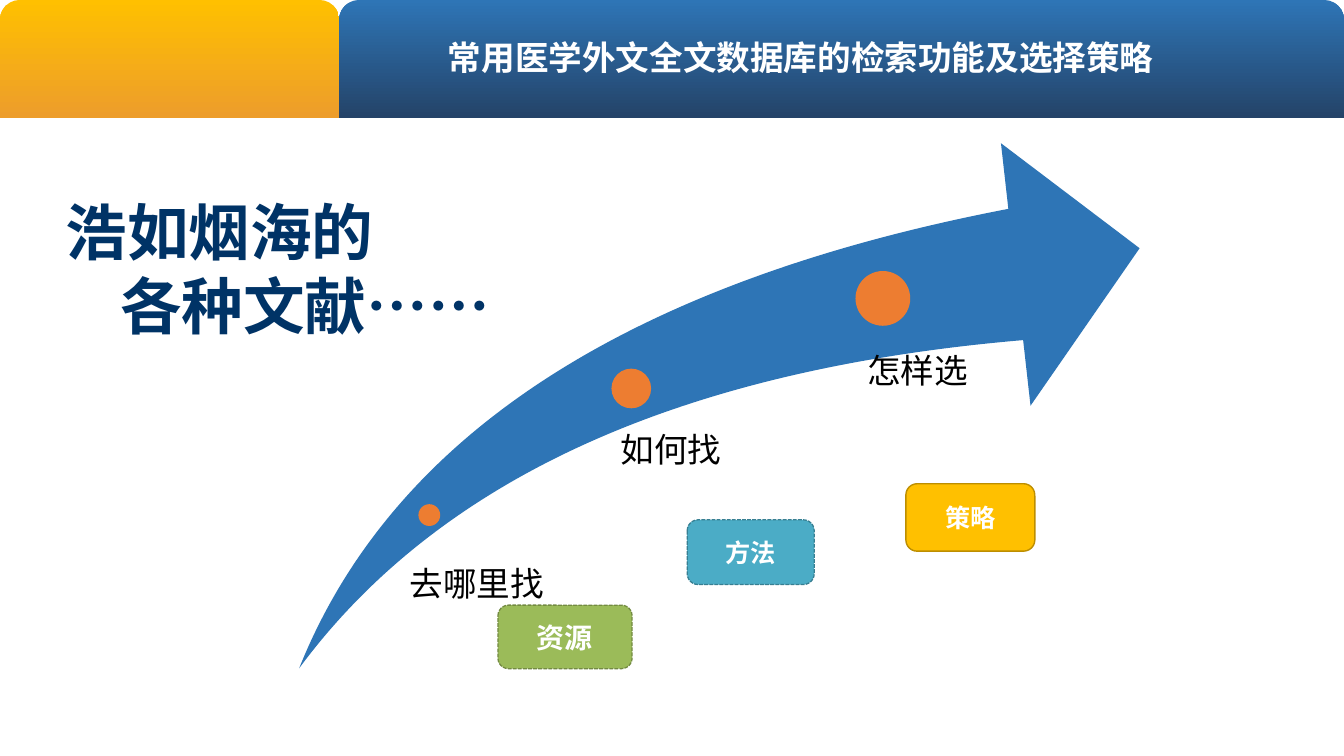
import pptx
import pptx.util
import pptx.dml.color
import pptx.enum.dml
import pptx.enum.shapes
import pptx.enum.text
import pptx.oxml
import pptx.oxml.ns

Cm, Pt = pptx.util.Cm, pptx.util.Pt
RGBColor = pptx.dml.color.RGBColor
SHAPE = pptx.enum.shapes.MSO_SHAPE
ALIGN = pptx.enum.text.PP_ALIGN
ANCHOR = pptx.enum.text.MSO_ANCHOR
DASH = pptx.enum.dml.MSO_LINE

BLUE = RGBColor(0x2E, 0x75, 0xB6)
DEEP_BLUE = RGBColor(0x24, 0x43, 0x68)
NAVY = RGBColor(0x00, 0x33, 0x66)
GOLD = RGBColor(0xFF, 0xC0, 0x00)
AMBER = RGBColor(0xED, 0x9D, 0x2B)
ORANGE = RGBColor(0xED, 0x7D, 0x31)
GREEN = RGBColor(0x9B, 0xBB, 0x59)
DARK_GREEN = RGBColor(0x73, 0x8A, 0x42)
TEAL = RGBColor(0x4B, 0xAC, 0xC6)
DARK_TEAL = RGBColor(0x37, 0x7F, 0x92)
DARK_GOLD = RGBColor(0xBD, 0x8E, 0x00)
BLACK = RGBColor(0, 0, 0)
WHITE = RGBColor(0xFF, 0xFF, 0xFF)
CJK = "Noto Sans CJK SC"


def style(p, size, color, bold=False, align=ALIGN.LEFT, latin=CJK):
    """Format a paragraph, for Latin and East Asian text alike."""
    p.alignment = align
    p.font.size, p.font.bold, p.font.name = Pt(size), bold, latin
    p.font.color.rgb = color
    ea = pptx.oxml.parse_xml(
        f'<a:ea {pptx.oxml.ns.nsdecls("a")} typeface="{CJK}"/>')
    p._p.pPr.find(pptx.oxml.ns.qn("a:defRPr")).append(ea)


def clear_margins(tf):
    """Remove the inner margins of a text frame."""
    tf.margin_left = tf.margin_right = tf.margin_top = tf.margin_bottom = 0


def add_shape(s, kind, x, y, w, h, color=None):
    """Add a flat, unlined shape; measures are in centimetres."""
    sp = s.shapes.add_shape(kind, Cm(x), Cm(y), Cm(w), Cm(h))
    sp.shadow.inherit = False
    sp.line.fill.background()
    if color is not None:
        sp.fill.solid()
        sp.fill.fore_color.rgb = color
    return sp


def add_text(s, x, y, w, h, lines, size, color, bold=False):
    """Add a text box without margins and return its paragraphs."""
    tf = s.shapes.add_textbox(Cm(x), Cm(y), Cm(w), Cm(h)).text_frame
    tf.word_wrap = True
    clear_margins(tf)
    tf.text = "\n".join(lines)
    for p in tf.paragraphs:
        style(p, size, color, bold)
    return tf.paragraphs


def add_header(s, x, y, w, h):
    """Draw the two header tabs and the slide title."""
    split = 8.55
    tabs = [(x + split, w - split, BLUE, DEEP_BLUE), (x, split, GOLD, AMBER)]
    for left, width, top_color, bottom_color in tabs:
        sp = add_shape(s, SHAPE.ROUND_2_SAME_RECTANGLE, left, y, width, h)
        sp.fill.gradient()
        sp.fill.gradient_angle = 270
        for stop, color in zip(sp.fill.gradient_stops,
                               (top_color, bottom_color)):
            stop.color.rgb = color
    title = s.shapes.title
    title.left, title.top = Cm(x + 11.29), Cm(y + 0.94)
    title.width, title.height = Cm(18.6), Cm(1.02)
    s.shapes._spTree.append(title._element)
    tf = title.text_frame
    tf.text = "常用医学外文全文数据库的检索功能及选择策略"
    tf.auto_size = pptx.enum.text.MSO_AUTO_SIZE.NONE
    tf.vertical_anchor = ANCHOR.TOP
    clear_margins(tf)
    style(tf.paragraphs[0], 24, WHITE, True)


def add_lead(s, x, y, w, h):
    """Write the two-line lead, its second line indented."""
    lines = add_text(s, x, y, w, h, ["浩如烟海的", "各种文献……"], 44, NAVY, True)
    lines[1]._p.pPr.set("marL", str(Cm(1.38)))


def add_path(s, x, y, w, h):
    """Draw the rising arrow with its dots and questions."""
    arrow = add_shape(s, SHAPE.SWOOSH_ARROW, x, y, w, h, BLUE)
    arrow.adjustments[0] = arrow.adjustments[1] = 0.25
    steps = [("去哪里找", 3.28, 9.37, 0.55, 2.78, 10.58),
             ("如何找", 8.37, 6.18, 1.0, 8.1, 7.2),
             ("怎样选", 14.71, 3.91, 1.38, 14.32, 5.22)]
    for text, cx, cy, size, left, top in steps:
        add_shape(s, SHAPE.OVAL, x + cx - size / 2, y + cy - size / 2,
                  size, size, ORANGE)
        add_text(s, x + left, y + top, 4.5, 1.02, [text], 24, BLACK)


def add_tag(s, x, y, w, h, text, size, latin, fill, edge, weight, dash):
    """Draw a rounded tag with a centred bold word."""
    sp = add_shape(s, SHAPE.ROUNDED_RECTANGLE, x, y, w, h, fill)
    sp.line.color.rgb = edge
    sp.line.width = Pt(weight)
    sp.line.dash_style = dash
    sp.text_frame.text = text
    sp.text_frame.vertical_anchor = ANCHOR.MIDDLE
    style(sp.text_frame.paragraphs[0], size, WHITE, True, ALIGN.CENTER, latin)


def main():
    """Build the slide and save it."""
    prs = pptx.Presentation()
    prs.slide_width, prs.slide_height = Cm(33.87), Cm(19.05)
    s = prs.slides.add_slide(prs.slide_layouts[5])
    add_header(s, 0, 0, 33.87, 2.97)
    add_lead(s, 1.65, 4.88, 17.9, 3.76)
    add_path(s, 7.54, 3.61, 21.18, 13.23)
    add_tag(s, 12.55, 15.25, 3.38, 1.6, "资源", 20, "Arial",
            GREEN, DARK_GREEN, 0.9, DASH.SQUARE_DOT)
    add_tag(s, 17.32, 13.1, 3.2, 1.63, "方法", 18, "Arial",
            TEAL, DARK_TEAL, 0.9, DASH.SQUARE_DOT)
    add_tag(s, 22.83, 12.19, 3.25, 1.7, "策略", 18, CJK,
            GOLD, DARK_GOLD, 1, DASH.SOLID)
    prs.save("out.pptx")


if __name__ == "__main__":
    main()
